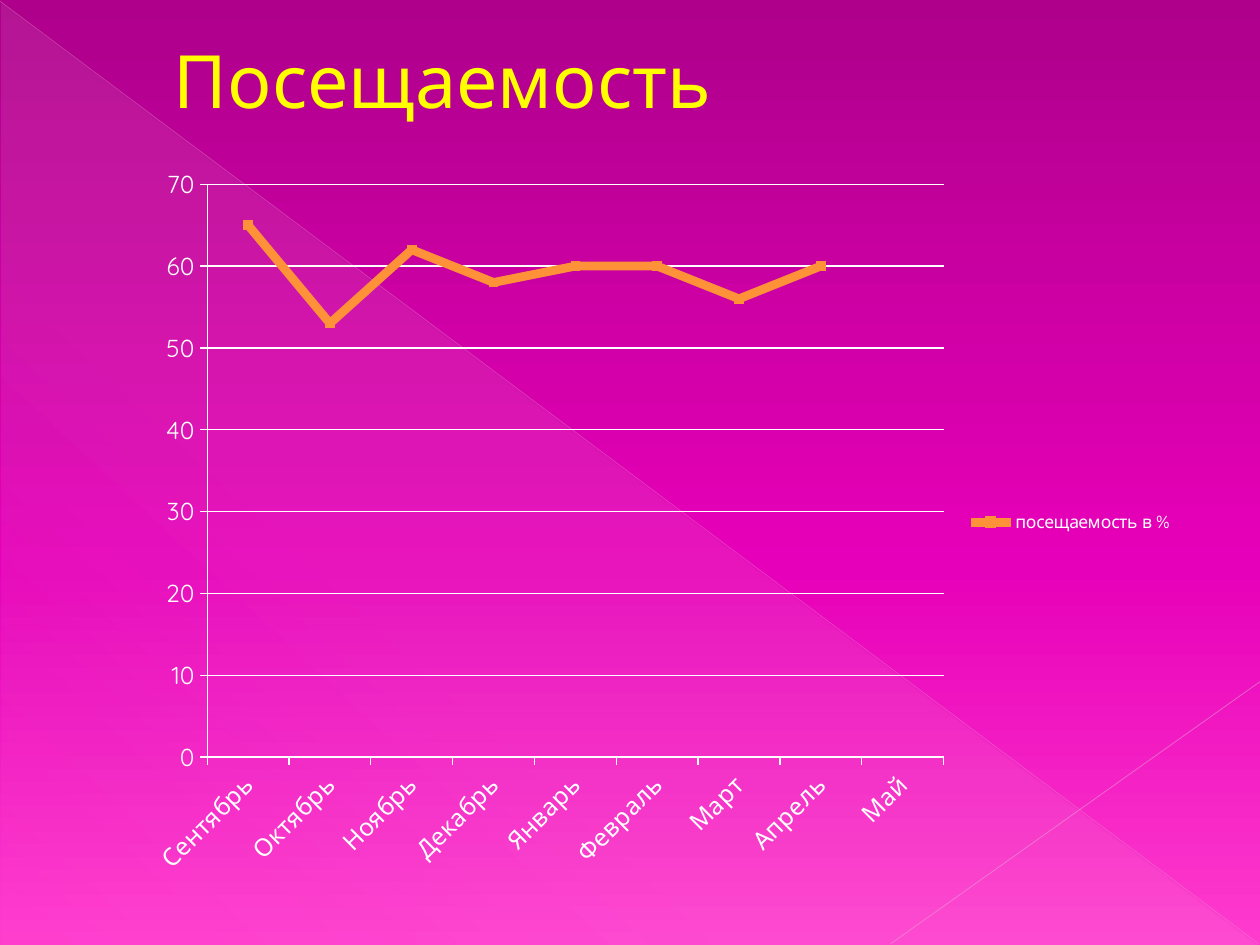
from lxml import etree
from pptx import Presentation
from pptx.chart.data import CategoryChartData
from pptx.dml.color import RGBColor
from pptx.enum.chart import XL_CHART_TYPE, XL_LEGEND_POSITION, XL_MARKER_STYLE, XL_TICK_MARK
from pptx.enum.shapes import MSO_CONNECTOR, MSO_SHAPE
from pptx.enum.text import MSO_ANCHOR, PP_ALIGN
from pptx.oxml import parse_xml
from pptx.oxml.ns import nsdecls, qn
from pptx.util import Inches, Pt

FONT = "Quicksand"
WHITE = "FFFFFF"
ORANGE = "FF9138"
MONTHS = ["Сентябрь", "Октябрь", "Ноябрь", "Декабрь", "Январь",
          "Февраль", "Март", "Апрель", "Май"]
ATTENDANCE = [65, 53, 62, 58, 60, 60, 56, 60, None]


def rgb(color):
    return RGBColor.from_string(color)


def format_font(font, size, color):
    font.name = FONT
    font.size = Pt(size)
    font.color.rgb = rgb(color)


def format_line(line, color, width):
    line.color.rgb = rgb(color)
    line.width = Pt(width)


def set_alpha(color_element, percent):
    etree.SubElement(color_element, qn("a:alpha"), val=str(percent * 1000))


def set_gradient(owner, fill, stops, angle):
    """Fill with (position %, colour, opacity %) stops; angle runs clockwise."""
    fill.gradient()
    gradient = next(owner.element.iter(qn("a:gradFill")))
    stop_list = "".join(
        f'<a:gs pos="{position * 1000}"><a:srgbClr val="{color}">'
        f'<a:alpha val="{opacity * 1000}"/></a:srgbClr></a:gs>'
        for position, color, opacity in stops)
    gradient.getparent().replace(gradient, parse_xml(
        f'<a:gradFill {nsdecls("a")} rotWithShape="1"><a:gsLst>{stop_list}</a:gsLst>'
        f'<a:lin ang="{angle * 60000}" scaled="0"/></a:gradFill>'))


def write_text(frame, text, size, color, indent=0, outline=None):
    frame.text = text
    paragraph = frame.paragraphs[0]
    paragraph.alignment = PP_ALIGN.LEFT
    properties = paragraph._p.get_or_add_pPr()
    properties.set("marL", str(Inches(indent)))
    properties.set("indent", "0")
    run = paragraph.runs[0]
    format_font(run.font, size, color)
    if outline:
        outline_color, width = outline
        run._r.get_or_add_rPr().insert(0, parse_xml(
            f'<a:ln {nsdecls("a")} w="{Pt(width)}"><a:solidFill>'
            f'<a:srgbClr val="{outline_color}"/></a:solidFill></a:ln>'))


def add_ray(slide, start, end, color, width, opacity):
    ray = slide.shapes.add_connector(
        MSO_CONNECTOR.STRAIGHT, *(Inches(value) for value in start + end))
    format_line(ray.line, color, width)
    set_alpha(next(ray.element.spPr.iter(qn("a:srgbClr"))), opacity)
    etree.SubElement(ray.element.spPr, qn("a:effectLst"))


def add_backdrop(slide, width, height):
    set_gradient(slide, slide.background.fill,
                 [(0, "AE008B", 100), (60, "E700B9", 100), (100, "FF3BCE", 100)], 90)
    glow = slide.shapes.add_shape(MSO_SHAPE.RIGHT_TRIANGLE, Inches(0.01), Inches(0.02),
                                  Inches(width - 0.02), Inches(height - 0.02))
    glow.shadow.inherit = False
    glow.line.fill.background()
    set_gradient(glow, glow.fill,
                 [(0, "F4E7ED", 10), (70, "F4E7ED", 8), (100, "F4E7ED", 1)], 133)
    bottom = height - 0.01
    add_ray(slide, (0, 0.01), (width - 0.01, bottom), "E9A8D7", 0.39, 35)
    add_ray(slide, (width, 5.41), (7.07, bottom), "EBB2DB", 0.47, 45)


def add_title(slide, left, top, width, height):
    title = slide.shapes.title
    title.left, title.top = Inches(left), Inches(top)
    title.width, title.height = Inches(width), Inches(height)
    title.text_frame.vertical_anchor = MSO_ANCHOR.MIDDLE
    write_text(title.text_frame, "Посещаемость", 42, "FFFF00",
               indent=0.53, outline=("7F2A48", 0.5))
    # The title lies above the backdrop
    slide.shapes._spTree.append(title.element)


def place_plot(chart, x, y, w, h):
    """Set the inner plot area as fractions of the chart."""
    plot_area = next(chart.element.iter(qn("c:plotArea")))
    for layout in plot_area.findall(qn("c:layout")):
        plot_area.remove(layout)
    sizes = "".join(f'<c:{key} val="{value}"/>'
                    for key, value in (("x", x), ("y", y), ("w", w), ("h", h)))
    plot_area.insert(0, parse_xml(
        f'<c:layout {nsdecls("c")}><c:manualLayout><c:layoutTarget val="inner"/>'
        f'<c:xMode val="edge"/><c:yMode val="edge"/>{sizes}</c:manualLayout></c:layout>'))


def add_attendance_chart(slide, left, top, width, height):
    data = CategoryChartData()
    data.categories = MONTHS
    data.add_series("посещаемость в %", ATTENDANCE)
    chart = slide.shapes.add_chart(
        XL_CHART_TYPE.LINE_MARKERS, Inches(left), Inches(top),
        Inches(width), Inches(height), data).chart
    format_font(chart.font, 10, WHITE)
    chart.has_title = False
    chart.has_legend = True
    chart.legend.position = XL_LEGEND_POSITION.RIGHT
    chart.legend.include_in_layout = False
    place_plot(chart, 0.07, 0.04, 0.7, 0.78)

    months, percent = chart.category_axis, chart.value_axis
    for axis in (months, percent):
        axis.major_tick_mark = XL_TICK_MARK.OUTSIDE
        format_font(axis.tick_labels.font, 14, WHITE)
        format_line(axis.format.line, WHITE, 0.75)
    next(months._element.iter(qn("a:bodyPr"))).set("rot", str(-45 * 60000))
    percent.minimum_scale, percent.maximum_scale, percent.major_unit = 0, 70, 10
    percent.has_major_gridlines = True
    format_line(percent.major_gridlines.format.line, WHITE, 0.75)

    chart.plots[0].vary_by_categories = False
    attendance = chart.plots[0].series[0]
    attendance.smooth = False
    format_line(attendance.format.line, ORANGE, 5)
    marker = attendance.marker
    marker.style = XL_MARKER_STYLE.SQUARE
    marker.size = 5
    marker.format.fill.solid()
    marker.format.fill.fore_color.rgb = rgb(ORANGE)
    format_line(marker.format.line, ORANGE, 0.75)


def main():
    width, height = 10, 7.5
    deck = Presentation()
    deck.slide_width, deck.slide_height = Inches(width), Inches(height)
    slide = deck.slides.add_slide(deck.slide_layouts[5])
    add_backdrop(slide, width, height)
    add_title(slide, 0.75, 0.17, 7.51, 0.91)
    add_attendance_chart(slide, 1.06, 1.23, 8.35, 5.83)
    deck.save("out.pptx")


if __name__ == "__main__":
    main()
